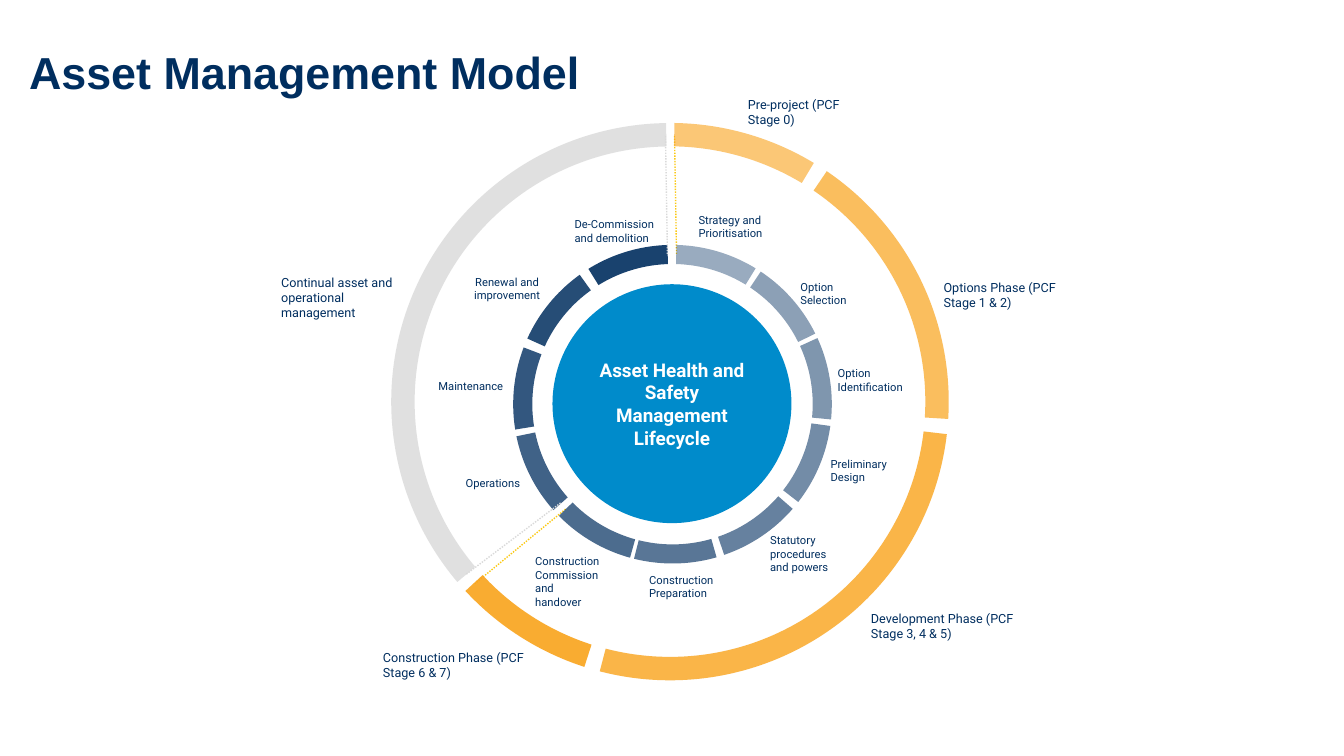
from lxml import etree
from pptx import Presentation
from pptx.dml.color import RGBColor
from pptx.enum.dml import MSO_LINE
from pptx.enum.shapes import MSO_CONNECTOR, MSO_SHAPE
from pptx.enum.text import MSO_ANCHOR, MSO_AUTO_SIZE, PP_ALIGN
from pptx.oxml.ns import qn
from pptx.util import Inches, Pt

ARC, OVAL = MSO_SHAPE.BLOCK_ARC, MSO_SHAPE.OVAL
STRAIGHT, DOTTED = MSO_CONNECTOR.STRAIGHT, MSO_LINE.ROUND_DOT
LEFT, CENTER = PP_ALIGN.LEFT, PP_ALIGN.CENTER
MIDDLE = MSO_ANCHOR.MIDDLE
GROW = MSO_AUTO_SIZE.SHAPE_TO_FIT_TEXT

NAVY = RGBColor(0x00, 0x2E, 0x5F)
BLUE = RGBColor(0x00, 0x8B, 0xCB)
ORANGE = RGBColor(0xF9, 0xA3, 0x1B)
YELLOW = RGBColor(0xFB, 0xC9, 0x14)
GREY = RGBColor(0xD9, 0xD9, 0xD9)
WHITE = RGBColor(0xFF, 0xFF, 0xFF)

# Ring geometry: left, top, diameter, thickness as a share of the diameter
OUTER_RING = (3.88, 1.22, 5.53, 0.042)
INNER_RING = (5.09, 2.43, 3.16, 0.06)

# Rotation, start angle, end angle and opacity of each project phase
PHASES = [
    (334, 296.93, 327.08, 60),
    (6, 298.23, 357.56, 70),
    (69, 297.71, 35.59, 80),
    (68, 39.89, 69.21, 90),
]

# Rotations of the eleven lifecycle steps, clockwise from the top
STEP_ROTATIONS = [4.6, 36.8, 68.6, 101, 134.2, 167.1, 198.6, 231.5, 264, 297.5, 331.3]
STEP_START, STEP_END = 266.86, 296.89

PHASE_LABELS = [
    ("Pre-project (PCF Stage 0)", 7.32, 0.91, 1.27, 0.4),
    ("Options Phase (PCF Stage 1 & 2)", 9.26, 2.73, 1.41, 0.4),
    ("Development Phase (PCF Stage 3, 4 & 5)", 8.54, 6.01, 1.66, 0.4),
    ("Construction Phase (PCF Stage 6 & 7)", 3.7, 6.4, 1.66, 0.4),
    ("Continual asset and operational management", 2.69, 2.67, 1.42, 0.56),
]
STEP_LABELS = [
    ("Strategy and Prioritisation", 6.83, 2.06, 0.92, 0.38),
    ("Option Selection", 7.84, 2.72, 0.75, 0.38),
    ("Option Identification", 8.21, 3.58, 0.92, 0.38),
    ("Preliminary Design", 8.14, 4.48, 0.87, 0.38),
    ("Statutory procedures and powers", 7.54, 5.24, 0.9, 0.51),
    ("Construction Preparation", 6.34, 5.63, 1.04, 0.38),
    ("Construction Commission and handover", 5.21, 5.45, 0.86, 0.64),
    ("Operations", 4.52, 4.67, 0.84, 0.24),
    ("Maintenance", 4.25, 3.71, 0.97, 0.24),
    ("De-Commission and demolition", 5.6, 2.1, 1.12, 0.38),
]


class LifecycleSlide:
    """Holds the style, the slide and the group of the wheel."""

    font = "Roboto"

    def __init__(self, slide):
        self.slide = slide
        self.wheel = slide.shapes.add_group_shape().shapes

    def set_text(self, shape, text, size, color, bold=False, align=LEFT, font=None):
        frame = shape.text_frame
        frame.word_wrap = True
        frame.vertical_anchor = MIDDLE
        frame.text = text
        paragraph = frame.paragraphs[0]
        paragraph.alignment = align
        style = paragraph.runs[0].font
        style.name = font or self.font
        style.size = Pt(size)
        style.bold = bold
        style.color.rgb = color
        return paragraph

    def title(self, text, *box):
        heading = self.slide.shapes.add_textbox(*map(Inches, box))
        paragraph = self.set_text(heading, text, 32, NAVY, bold=True, font="Arial")
        paragraph.line_spacing = 0.9

    def label(self, text, *box, size=8, align=LEFT):
        caption = self.wheel.add_textbox(*map(Inches, box))
        self.set_text(caption, text, size, NAVY, align=align)
        caption.text_frame.auto_size = GROW

    def solid(self, kind, color, *box):
        shape = self.wheel.add_shape(kind, *map(Inches, box))
        shape.shadow.inherit = False
        shape.fill.solid()
        shape.fill.fore_color.rgb = color
        shape.line.fill.background()
        return shape

    def hub(self, text, left, top, diameter):
        disc = self.solid(OVAL, BLUE, left, top, diameter, diameter)
        self.set_text(disc, text, 13.5, WHITE, bold=True, align=CENTER)

    def arc(self, ring, rotation, start, end, color, opacity):
        left, top, diameter, thickness = ring
        segment = self.solid(ARC, color, left, top, diameter, diameter)
        segment.rotation = rotation
        # Angles are stored in 60000ths of a degree, adjustments in 100000ths
        segment.adjustments[0] = start * 0.6
        segment.adjustments[1] = end * 0.6
        segment.adjustments[2] = thickness
        for fill_color in segment._element.spPr.iter(qn("a:srgbClr")):
            etree.SubElement(fill_color, qn("a:alpha")).set("val", str(opacity * 1000))

    def divider(self, color, *ends):
        line = self.wheel.add_connector(STRAIGHT, *map(Inches, ends))
        line.line.color.rgb = color
        line.line.width = Pt(1)
        line.line.dash_style = DOTTED
        etree.SubElement(line._element.spPr, qn("a:effectLst"))


def main():
    deck = Presentation()
    deck.slide_width, deck.slide_height = Inches(13.33), Inches(7.5)
    model = LifecycleSlide(deck.slides.add_slide(deck.slide_layouts[6]))

    model.title("Asset Management Model", 0.19, 0.23, 12.13, 1.03)

    # Outer ring: operational management, then the project phases
    model.arc(OUTER_RING, 202, 297.71, 67.2, GREY, 80)
    model.divider(YELLOW, 6.71, 2.52, 6.69, 1.34)
    model.divider(YELLOW, 5.61, 5.05, 4.71, 5.79)
    for rotation, start, end, opacity in PHASES:
        model.arc(OUTER_RING, rotation, start, end, ORANGE, opacity)

    # Centre and inner ring, darkening clockwise
    model.hub("Asset Health and Safety Management Lifecycle", 5.48, 2.82, 2.37)
    for step, rotation in enumerate(STEP_ROTATIONS):
        model.arc(INNER_RING, rotation, STEP_START, STEP_END, NAVY, 40 + 5 * step)

    # Labels
    for phase_label in PHASE_LABELS:
        model.label(*phase_label, size=9)
    for step_label in STEP_LABELS:
        model.label(*step_label)
    model.label("Renewal and improvement", 4.58, 2.67, 0.9, 0.38, align=CENTER)

    # Edges of the operational management sector
    model.divider(GREY, 5.56, 4.99, 4.62, 5.7)
    model.divider(GREY, 6.62, 2.52, 6.6, 1.34)

    deck.save("out.pptx")


if __name__ == "__main__":
    main()
